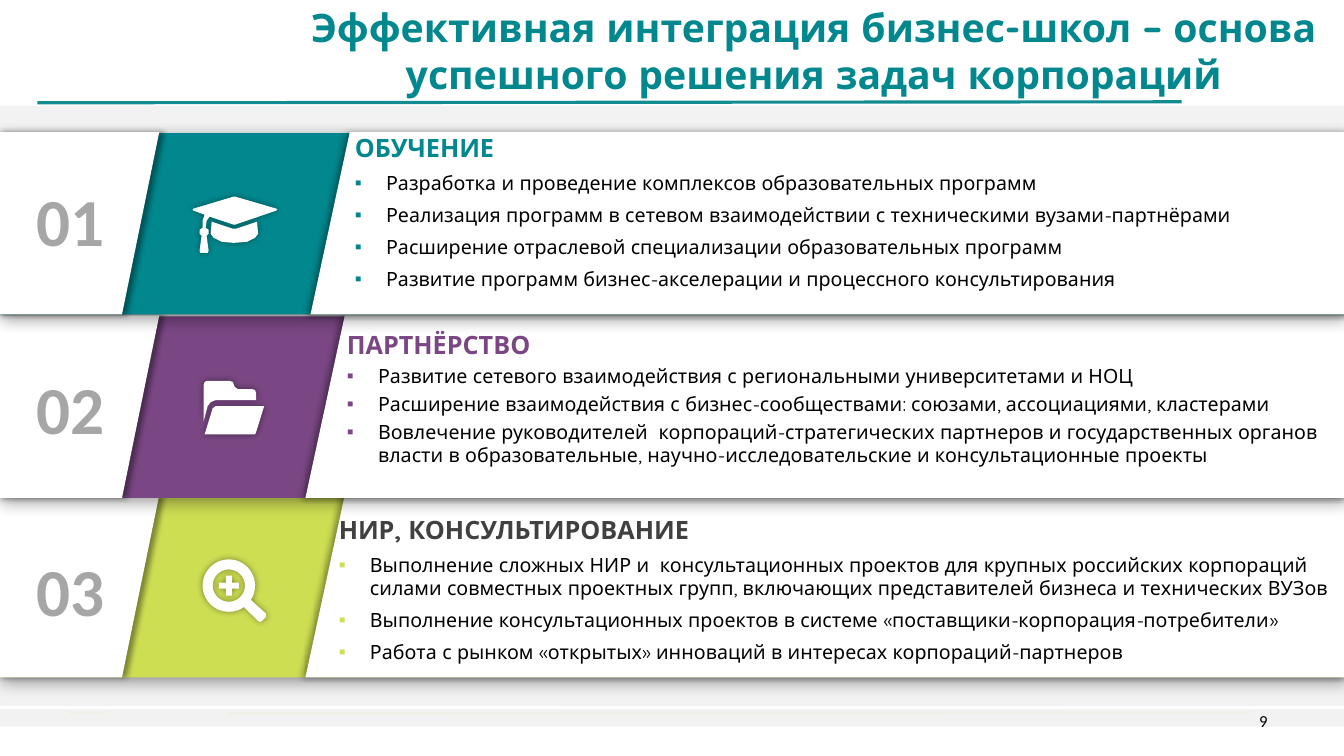
import math

from lxml import etree
from pptx import Presentation
from pptx import util as u
from pptx.dml.color import RGBColor
from pptx.enum import shapes, text
from pptx.oxml.ns import qn

COLORS = {
    "teal": "00888E", "rule": "128C91", "purple": "7A4784", "lime": "CEDE53",
    "white": "FFFFFF", "black": "000000", "panel": "F2F2F2",
    "number": "A6A6A6", "dark": "404040",
}
HEADING_FONT = "Quicksand"
BAND_HEIGHT = 1.81

# Shadows: blur (pt), distance (pt), direction (degrees)
BAND_SHADOW = (12, 3, 90)
LEFT_SHADOW = (4, 3, 0)
RIGHT_SHADOW = (4, 3, 180)
ICON_SHADOW = (5, 0, 0)


def arc(center, radius, start=0, end=360, steps=48):
    angles = [math.radians(start + (end - start) * i / steps) for i in range(steps + 1)]
    return [(center[0] + radius * math.cos(a), center[1] + radius * math.sin(a)) for a in angles]


def cap_icon():
    board = [(2.74, 2.09), (2.33, 2.23), (2.32, 2.23), (2.08, 2.15), (2.05, 2.19),
             (2.04, 2.26), (2.07, 2.28), (2.07, 2.32), (2.05, 2.34), (2.07, 2.49),
             (2.06, 2.51), (1.99, 2.51), (1.98, 2.49), (2, 2.34), (1.98, 2.32),
             (1.98, 2.28), (2.01, 2.26), (2.01, 2.19), (2.03, 2.13), (1.92, 2.09),
             (1.91, 2.08), (1.92, 2.07), (2.32, 1.95), (2.33, 1.95), (2.74, 2.07),
             (2.75, 2.08)]
    base = [(2.56, 2.32), (2.53, 2.36), (2.45, 2.4), (2.32, 2.41), (2.2, 2.4),
            (2.12, 2.36), (2.09, 2.32), (2.1, 2.2), (2.31, 2.27), (2.34, 2.27), (2.55, 2.2)]
    return [board, base]


def folder_icon():
    back = [(2.14, 3.97), (2.09, 3.99), (2.06, 4.03), (2.02, 4.18), (2.02, 3.82),
            (2.03, 3.79), (2.05, 3.78), (2.28, 3.78), (2.31, 3.79), (2.32, 3.82),
            (2.33, 3.84), (2.36, 3.86), (2.5, 3.86), (2.53, 3.87), (2.54, 3.9), (2.54, 3.97)]
    front = [(2.62, 4.03), (2.54, 4.29), (2.53, 4.31), (2.51, 4.31), (2.03, 4.31),
             (2.11, 4.05), (2.14, 4.03)]
    return [back, front]


def magnifier_icon():
    x, y = center = (2.27, 5.81)
    handle = [(2.64, 6.09), (2.64, 6.12), (2.6, 6.16), (2.58, 6.17), (2.56, 6.16)]
    thin, arm = 0.03, 0.1
    corners = [(thin, arm), (thin, thin), (arm, thin)]
    plus = []
    for sx, sy, order in ((1, 1, 1), (1, -1, -1), (-1, -1, 1), (-1, 1, -1)):
        plus += [(x + sx * dx, y + sy * dy) for dx, dy in corners[::order]]
    return [arc(center, 0.26, 55, 393) + handle, arc(center, 0.16), plus]


BANDS = [
    {"number": "01", "number_top": 1.93, "top": 1.31, "color": "teal", "wing": 3.08,
     "icon": cap_icon, "box": (3.52, 1.31, 9.76, 1.58), "gap": 6,
     "heading": "ОБУЧЕНИЕ", "heading_color": "teal",
     "items": ["Разработка и проведение комплексов образовательных программ",
               "Реализация программ в сетевом взаимодействии с техническими вузами-партнёрами",
               "Расширение отраслевой специализации образовательных программ",
               "Развитие программ бизнес-акселерации и процессного консультирования"]},
    {"number": "02", "number_top": 3.79, "top": 3.13, "color": "purple", "wing": 3.03,
     "icon": folder_icon, "box": (3.44, 3.27, 9.84, 1.37), "gap": 3,
     "heading": "ПАРТНЁРСТВО", "heading_color": "purple",
     "items": ["Развитие сетевого взаимодействия с региональными университетами и НОЦ",
               "Расширение взаимодействия с бизнес-сообществами: союзами, ассоциациями, кластерами",
               "Вовлечение руководителей  корпораций-стратегических партнеров и государственных "
               "органов власти в образовательные, научно-исследовательские и консультационные проекты"]},
    {"number": "03", "number_top": 5.6, "top": 4.91, "color": "lime", "wing": 3.03,
     "icon": magnifier_icon, "box": (3.36, 5.1, 9.99, 1.5), "gap": 6,
     "heading": "НИР, КОНСУЛЬТИРОВАНИЕ", "heading_color": "dark",
     "items": ["Выполнение сложных НИР и  консультационных проектов для крупных российских корпораций "
               "силами совместных проектных групп, включающих представителей бизнеса и технических ВУЗов",
               "Выполнение консультационных проектов в системе «поставщики-корпорация-потребители»",
               "Работа с рынком «открытых» инноваций в интересах корпораций-партнеров"]},
]


def rgb(name):
    return RGBColor.from_string(COLORS[name])


def add_color(parent, name, alpha=None):
    color = etree.SubElement(parent, qn("a:srgbClr"), val=COLORS[name])
    if alpha is not None:
        etree.SubElement(color, qn("a:alpha"), val=str(alpha * 1000))


def style_shape(shape, color, shadow=None):
    shape.fill.solid()
    shape.fill.fore_color.rgb = rgb(color)
    shape.line.fill.background()
    shape.shadow.inherit = False
    if shadow:
        blur, distance, angle = shadow
        effects = shape._element.spPr.find(qn("a:effectLst"))
        outer = etree.SubElement(effects, qn("a:outerShdw"), blurRad=str(u.Pt(blur)),
                                 dist=str(u.Pt(distance)), dir=str(angle * 60000),
                                 algn="ctr", rotWithShape="0")
        add_color(outer, "black", 40)


def add_rect(page, place, color, shadow=None):
    rect = page.shapes.add_shape(shapes.MSO_SHAPE.RECTANGLE, *map(u.Inches, place))
    style_shape(rect, color, shadow)
    return rect


def add_outline(page, contours, color, shadow):
    contours = [[(u.Inches(x), u.Inches(y)) for x, y in contour] for contour in contours]
    builder = page.shapes.build_freeform(*contours[0][0])
    for index, contour in enumerate(contours):
        if index:
            builder.move_to(*contour[0])
        builder.add_line_segments(contour[1:], close=True)
    style_shape(builder.convert_to_shape(), color, shadow)


def add_line(page, start, end, color, width):
    line = page.shapes.add_connector(shapes.MSO_CONNECTOR.STRAIGHT,
                                     *map(u.Inches, (*start, *end)))
    line.line.color.rgb = rgb(color)
    line.line.width = u.Pt(width)
    etree.SubElement(line._element.spPr, qn("a:effectLst"))


def add_box(page, place, inset=True, middle=False):
    box = page.shapes.add_textbox(*map(u.Inches, place))
    frame = box.text_frame
    frame.word_wrap = True
    if middle:
        frame.vertical_anchor = text.MSO_ANCHOR.MIDDLE
    if not inset:
        frame.margin_left = frame.margin_right = frame.margin_top = frame.margin_bottom = 0
        frame.auto_size = text.MSO_AUTO_SIZE.SHAPE_TO_FIT_TEXT
    return frame


def write(para, words, size, color, font=HEADING_FONT, bold=False, align=None,
          after=None, spacing=None, bullet=None):
    if bullet:
        props = para._p.get_or_add_pPr()
        props.set("marL", str(u.Inches(0.31)))
        props.set("indent", str(u.Inches(-0.31)))
        add_color(etree.SubElement(props, qn("a:buClr")), bullet)
        etree.SubElement(props, qn("a:buFont"), typeface="Arial")
        etree.SubElement(props, qn("a:buChar"), char="▪")
    para.alignment = align
    para.line_spacing = spacing
    if after is not None:
        para.space_after = u.Pt(after)
    span = para.add_run()
    span.text = words
    span.font.size = u.Pt(size)
    span.font.name = font
    span.font.bold = bold
    span.font.color.rgb = rgb(color)


def add_band(page, band):
    top, wing = band["top"], band["wing"]
    bottom = top + BAND_HEIGHT
    add_rect(page, (0, top + 0.01, 13.35, BAND_HEIGHT - 0.01), band["color"], BAND_SHADOW)
    left = [(-0.03, top), (1.58, top), (1.21, bottom), (-0.03, bottom)]
    right = [(wing + 0.39, top), (wing + 10.33, top), (wing + 10.33, bottom), (wing, bottom)]
    add_outline(page, [left], "white", LEFT_SHADOW)
    add_outline(page, [right], "white", RIGHT_SHADOW)


def add_band_content(page, band):
    number = add_box(page, (0.36, band["number_top"], 1.03, 0.65), inset=False, middle=True)
    write(number.paragraphs[0], band["number"], 48, "number", font="Calibri",
          bold=True, spacing=0.8)
    frame = add_box(page, band["box"], inset=False)
    write(frame.paragraphs[0], band["heading"], 18, band["heading_color"],
          bold=True, after=band["gap"])
    for item in band["items"]:
        write(frame.add_paragraph(), item, 14, "black", after=band["gap"], bullet=band["color"])
    add_outline(page, band["icon"](), "white", ICON_SHADOW)


def main():
    deck = Presentation()
    deck.slide_width, deck.slide_height = u.Inches(13.33), u.Inches(7.5)
    page = deck.slides.add_slide(deck.slide_layouts[6])

    # Rules and background panel
    add_line(page, (2.25, 7.08), (12.4, 7.07), "lime", 2.25)
    add_line(page, (0.68, 7.07), (1.05, 7.07), "lime", 2.25)
    add_line(page, (0.37, 1.02), (11.72, 1.01), "rule", 2.25)
    panel = add_rect(page, (0, 1.05, 13.33, 6.16), "panel")
    fill = panel._element.spPr.find(qn("a:solidFill"))
    etree.SubElement(fill[0], qn("a:alpha"), val="95000")
    add_line(page, (0, 7.02), (13.33, 7.02), "white", 1.75)

    # Bands overlap upwards, so the lowest comes first
    for band in reversed(BANDS):
        add_band(page, band)
    for band in BANDS:
        add_band_content(page, band)

    # Title and page number
    title = add_box(page, (2.89, 0.05, 10.36, 0.9), middle=True)
    write(title.paragraphs[0],
          "Эффективная интеграция бизнес-школ – основа успешного решения задач корпораций",
          28, "teal", bold=True, align=text.PP_ALIGN.CENTER)
    page_number = add_box(page, (9.56, 6.95, 3.11, 0.4), middle=True)
    write(page_number.paragraphs[0], "9", 12, "black", font="Calibri",
          align=text.PP_ALIGN.RIGHT)

    deck.save("out.pptx")


if __name__ == "__main__":
    main()
